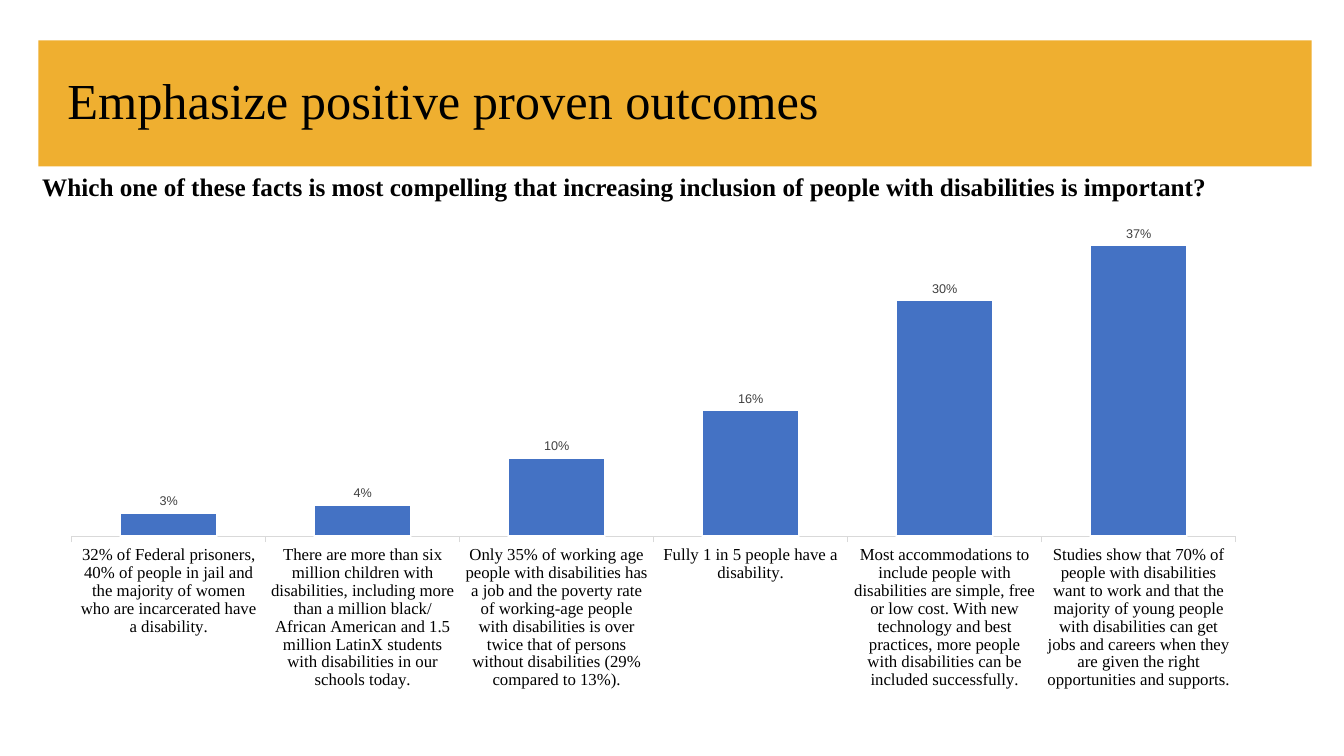
from lxml.etree import SubElement as Sub
from pptx import Presentation
from pptx.chart.data import CategoryChartData as Data
from pptx.dml.color import RGBColor as RGB
from pptx.enum.chart import XL_CHART_TYPE as Kind, XL_LABEL_POSITION as Spot
from pptx.enum.chart import XL_TICK_MARK as Tick
from pptx.enum.shapes import MSO_SHAPE as Shape
from pptx.enum.text import MSO_ANCHOR as Anchor
from pptx.oxml.ns import qn
from pptx.util import Inches, Pt

FACTS = [
    ("32% of Federal prisoners, 40% of people in jail and the majority of "
     "women who are incarcerated have a disability.", 0.03),
    ("There are more than six million children with disabilities, including "
     "more than a million black/African American and 1.5 million LatinX "
     "students with disabilities in our schools today.", 0.04),
    ("Only 35% of working age people with disabilities has a job and the "
     "poverty rate of working-age people with disabilities is over twice "
     "that of persons without disabilities (29% compared to 13%).", 0.1),
    ("Fully 1 in 5 people have a disability.", 0.16),
    ("Most accommodations to include people with disabilities are simple, "
     "free or low cost. With new technology and best practices, more people "
     "with disabilities can be included successfully.", 0.3),
    ("Studies show that 70% of people with disabilities want to work and "
     "that the majority of young people with disabilities can get jobs and "
     "careers when they are given the right opportunities and supports.", 0.37),
]


def tint(code):
    return RGB.from_string(code)


class Deck:
    """Holds the style and the current slide, and draws each element."""

    serif, sans = "Times New Roman", "Arial"
    ink, gold, blue = "000000", "EFAF30", "4472C4"
    white, gray, rule = "FFFFFF", "404040", "D9D9D9"

    def __init__(self):
        self.prs = Presentation()
        self.prs.slide_width = Inches(13.33)
        self.prs.slide_height = Inches(7.5)
        self.slide = self.prs.slides.add_slide(self.prs.slide_layouts[6])

    def font(self, font, size, name, color, bold=False):
        font.size, font.name, font.bold = Pt(size), name, bold
        font.color.rgb = tint(color)

    def band(self, *box):
        bar = self.slide.shapes.add_shape(Shape.RECTANGLE, *map(Inches, box))
        bar.shadow.inherit = False
        bar.fill.solid()
        bar.fill.fore_color.rgb = tint(self.gold)
        bar.line.fill.background()

    def text(self, words, size, *box, bold=False, anchor=Anchor.TOP, lead=1.0):
        frame = self.slide.shapes.add_textbox(*map(Inches, box)).text_frame
        frame.word_wrap = True
        frame.vertical_anchor = anchor
        para = frame.paragraphs[0]
        para.line_spacing = lead
        run = para.add_run()
        run.text = words
        self.font(run.font, size, self.serif, self.ink, bold)

    def place(self, chart, **frame):
        plot = chart.plots[0]._element.getparent()
        old = plot.find(qn("c:layout"))
        if old is not None:
            plot.remove(old)
        layout = Sub(plot, qn("c:layout"))
        plot.insert(0, layout)
        manual = Sub(layout, qn("c:manualLayout"))
        marks = dict(layoutTarget="inner", xMode="edge", yMode="edge", **frame)
        for tag, val in marks.items():
            Sub(manual, qn("c:" + tag)).set("val", str(val))

    def columns(self, facts, *box):
        data = Data(number_format="0%")
        data.categories = [fact for fact, share in facts]
        data.add_series("Series 1", [share for fact, share in facts])
        chart = self.slide.shapes.add_chart(
            Kind.COLUMN_CLUSTERED, *map(Inches, box), data).chart
        chart.has_legend = chart.has_title = False
        self.font(chart.font, 10, self.sans, self.ink)
        self.place(chart, x=0.012, y=0.028, w=0.975, h=0.589)

        base = chart.category_axis
        base.major_tick_mark = Tick.OUTSIDE
        self.font(base.tick_labels.font, 12, self.serif, self.ink)
        base.format.line.color.rgb = tint(self.rule)
        base.format.line.width = Pt(0.75)

        scale = chart.value_axis
        scale.minimum_scale, scale.maximum_scale = 0, 0.4
        scale.has_major_gridlines = scale.visible = False

        plot = chart.plots[0]
        plot.gap_width = 100
        plot.vary_by_categories = False
        bars = plot.series[0]
        bars.format.fill.solid()
        bars.format.fill.fore_color.rgb = tint(self.blue)
        bars.format.line.color.rgb = tint(self.white)
        bars.format.line.width = Pt(1.5)

        tags = bars.data_labels
        tags.show_value = True
        tags.number_format, tags.number_format_is_linked = "0%", False
        tags.position = Spot.OUTSIDE_END
        self.font(tags.font, 9, self.sans, self.gray)


def main():
    deck = Deck()
    deck.band(0.38, 0.4, 12.63, 1.25)
    deck.text("Emphasize positive proven outcomes", 36, 0.57, 0.4, 11.5, 1.25,
              anchor=Anchor.MIDDLE, lead=0.9)
    deck.columns(FACTS, 0.57, 2.05, 11.84, 5.3)
    deck.text("Which one of these facts is most compelling that increasing "
              "inclusion of people with disabilities is important?",
              18, 0.32, 1.65, 12.69, 0.4, bold=True)
    deck.prs.save("out.pptx")


if __name__ == "__main__":
    main()
